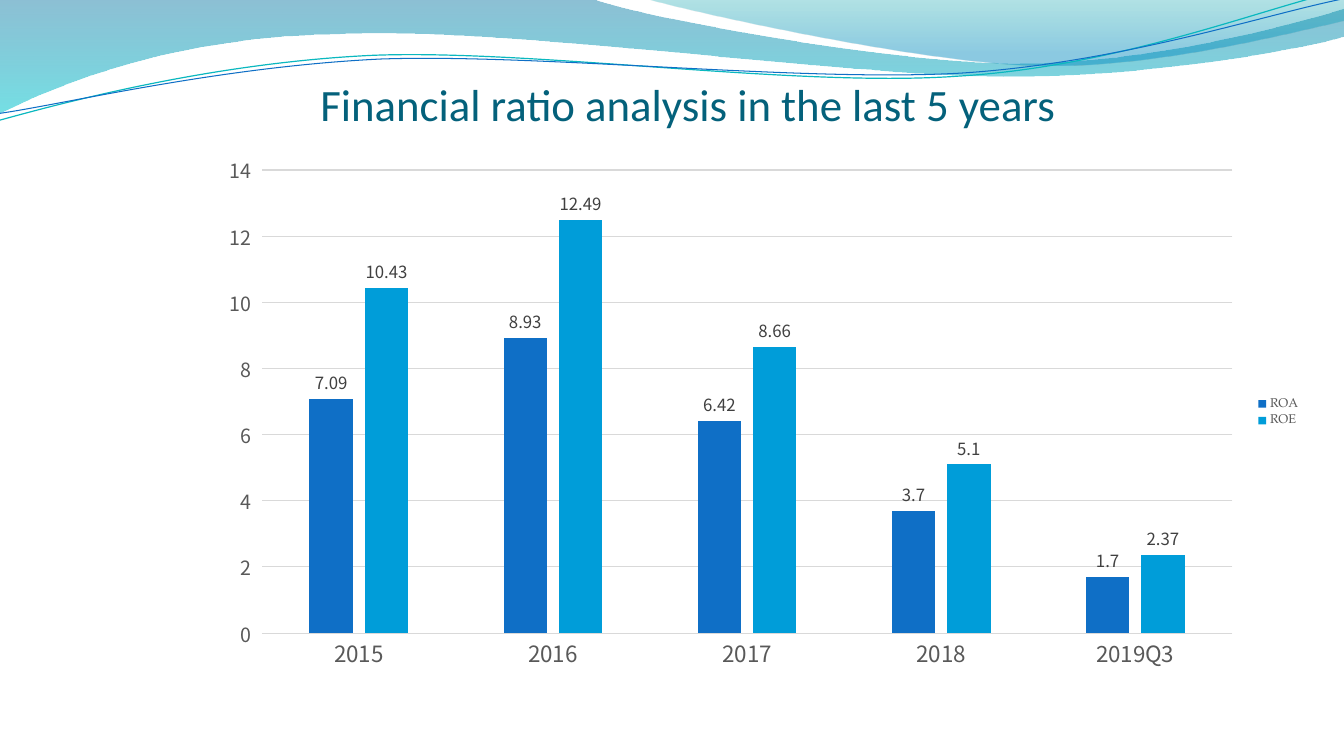
from lxml import etree
from pptx import Presentation
from pptx.chart.data import CategoryChartData
from pptx.dml.color import RGBColor
from pptx.enum.chart import XL_CHART_TYPE, XL_LABEL_POSITION, XL_LEGEND_POSITION, XL_TICK_MARK
from pptx.enum.text import MSO_ANCHOR, PP_ALIGN
from pptx.oxml.ns import qn
from pptx.util import Pt

PX = 9144
COLUMNS = XL_CHART_TYPE.COLUMN_CLUSTERED
OUTSIDE_END = XL_LABEL_POSITION.OUTSIDE_END
LEGEND_RIGHT = XL_LEGEND_POSITION.RIGHT
TICK_NONE = XL_TICK_MARK.NONE
TICK_OUT = XL_TICK_MARK.OUTSIDE
BOTTOM = MSO_ANCHOR.BOTTOM
CENTER = PP_ALIGN.CENTER
LABEL_FONT = "Noto Sans CJK SC"
SERIF_FONT = "TeX Gyre Pagella"
GRAY = "595959"
GRID_GRAY = "D9D9D9"


def color(value):
    return RGBColor.from_string(value)


def set_font(font, name, size, value):
    font.name = name
    font.size = Pt(size)
    font.color.rgb = color(value)


presentation = Presentation()
presentation.slide_width = 1333 * PX
presentation.slide_height = 750 * PX
slide = presentation.slides.add_slide(presentation.slide_layouts[6])

wide_wave = [
    [(-1, -1)], [(587, -1)],
    [(634, 17), (885, 63), (1011, 63)], [(1138, 63), (1278, 26), (1333, 9)],
    [(1335, 36)],
    [(1311, 44), (1160, 76), (994, 76)], [(829, 75), (509, 28), (343, 34)],
    [(172, 36), (61, 83), (-1, 113)],
]
right_wave = [
    [(639, -1)],
    [(679, 11), (909, 62), (1025, 65)], [(1141, 69), (1282, 32), (1333, 21)],
    [(1333, 0)],
]
teal_line = [
    [(-3, 88)],
    [(63, 73), (211, 41), (369, 41)], [(528, 42), (788, 93), (949, 89)],
    [(1109, 87), (1254, 36), (1333, 22)],
]
blue_line = [
    [(-2, 81)],
    [(62, 75), (218, 45), (378, 45)], [(537, 47), (795, 88), (954, 86)],
    [(1114, 83), (1256, 42), (1336, 30)],
]
waves = [
    (wide_wave, [(0, "0074A1", 45), (1, "00C6CF", 55)], None),
    (right_wave, [(0, "00A1A9", 30), (0.8, "008BBF", 45)], None),
    (teal_line, None, ("0AB8BF", 0.85)),
    (blue_line, None, ("0F6FC6", 0.75)),
]
for segments, gradient, line in waves:
    ends = [segment[-1] for segment in segments]
    left = min(x for x, y in ends)
    top = min(y for x, y in ends)
    builder = slide.shapes.build_freeform(*ends[0], scale=PX)
    builder.add_line_segments(ends[1:], close=gradient is not None)
    shape = builder.convert_to_shape()
    shape.shadow.inherit = False
    straight_parts = list(shape.element.iter(qn("a:lnTo")))
    for part, segment in zip(straight_parts, segments[1:]):
        if len(segment) == 3:
            curve = etree.Element(qn("a:cubicBezTo"))
            for x, y in segment:
                etree.SubElement(curve, qn("a:pt"), x=str(x - left), y=str(y - top))
            part.getparent().replace(part, curve)
    if gradient:
        shape.line.fill.background()
        shape.fill.gradient()
        shape.fill.gradient_angle = 270
        for stop, (position, value, opacity) in zip(shape.fill.gradient_stops, gradient):
            stop.position = position
            stop.color.rgb = color(value)
        fill_colors = shape.element.spPr.find(qn("a:gradFill")).iter(qn("a:srgbClr"))
        for fill_color, (position, value, opacity) in zip(fill_colors, gradient):
            etree.SubElement(fill_color, qn("a:alpha")).set("val", str(opacity * 1000))
    else:
        shape.rotation = 357.3
        shape.fill.background()
        shape.line.color.rgb = color(line[0])
        shape.line.width = Pt(line[1])

title = slide.shapes.add_textbox(195 * PX, 68 * PX, 975 * PX, 61 * PX)
frame = title.text_frame
frame.word_wrap = True
frame.vertical_anchor = BOTTOM
frame.margin_left = frame.margin_right = frame.margin_bottom = 0
frame.margin_top = 5 * PX
paragraph = frame.paragraphs[0]
paragraph.text = "Financial ratio analysis in the last 5 years"
paragraph.alignment = CENTER
set_font(paragraph.font, "Calibri", 32, "04617B")

ratios = [
    ("ROA", [7.09, 8.93, 6.42, 3.7, 1.7], "0F6FC6"),
    ("ROE", [10.43, 12.49, 8.66, 5.1, 2.37], "009DD9"),
]
data = CategoryChartData()
data.categories = ["2015", "2016", "2017", "2018", "2019Q3"]
for name, values, value in ratios:
    data.add_series(name, values)
chart = slide.shapes.add_chart(COLUMNS, 206 * PX, 144 * PX, 1094 * PX, 530 * PX, data).chart
chart.has_title = False
set_font(chart.font, SERIF_FONT, 10, "000000")
chart.has_legend = True
chart.legend.position = LEGEND_RIGHT
chart.legend.include_in_layout = False
set_font(chart.legend.font, SERIF_FONT, 9, GRAY)

plot = chart.plots[0]
plot.gap_width = 219
plot.overlap = -27
plot.vary_by_categories = False
for series, (name, values, value) in zip(plot.series, ratios):
    series.format.fill.solid()
    series.format.fill.fore_color.rgb = color(value)
    labels = series.data_labels
    labels.show_value = True
    labels.position = OUTSIDE_END
    set_font(labels.font, LABEL_FONT, 12, "404040")

category_axis = chart.category_axis
category_axis.major_tick_mark = TICK_NONE
set_font(category_axis.tick_labels.font, LABEL_FONT, 16, GRAY)
value_axis = chart.value_axis
value_axis.major_tick_mark = TICK_OUT
value_axis.format.line.fill.background()
set_font(value_axis.tick_labels.font, LABEL_FONT, 14, GRAY)
for line in (category_axis.format.line, value_axis.major_gridlines.format.line):
    line.color.rgb = color(GRID_GRAY)
    line.width = Pt(0.75)

presentation.save("out.pptx")
